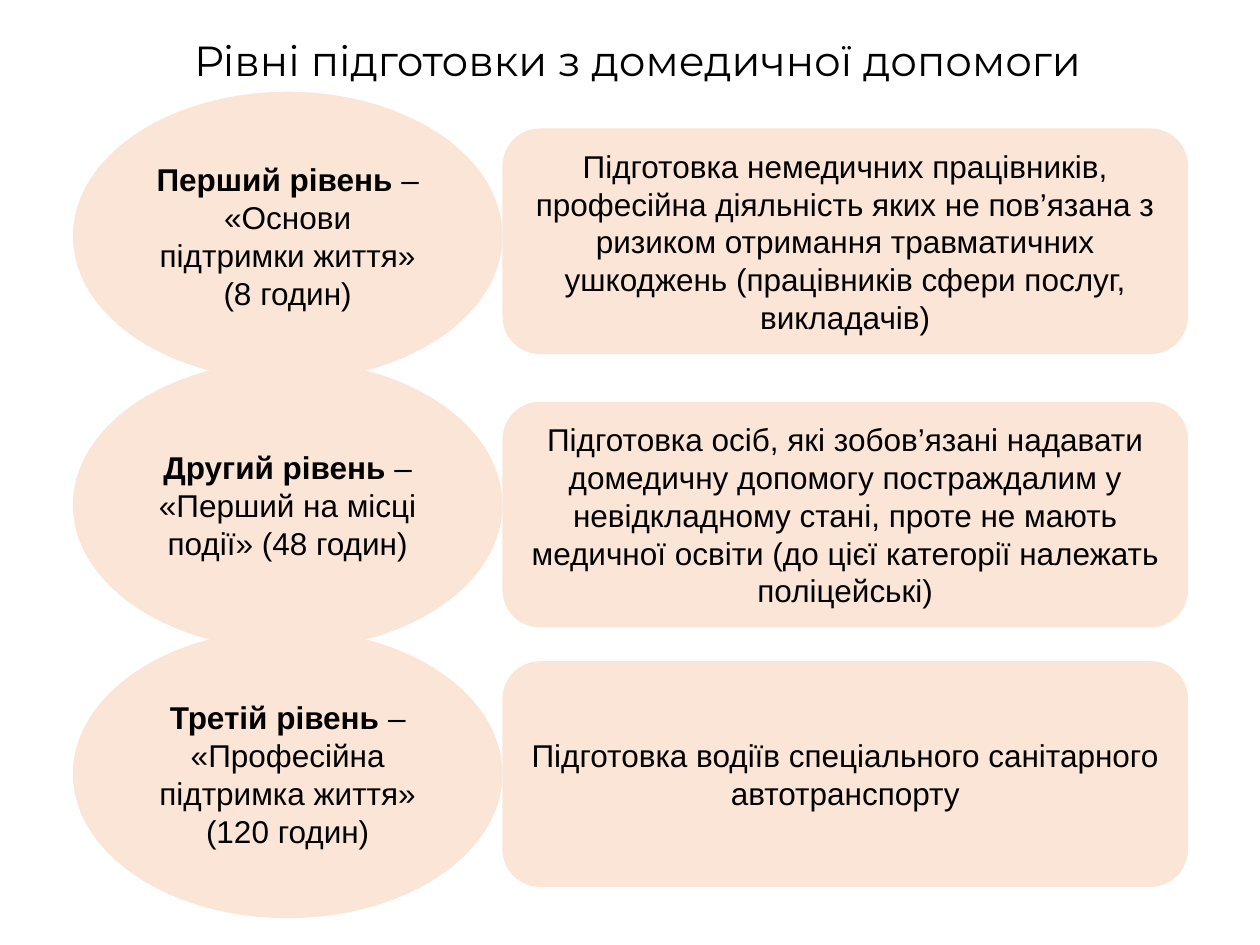
import pptx
import pptx.dml.color
import pptx.enum.shapes
import pptx.enum.text
import pptx.util

Cm = pptx.util.Cm
SHAPES = pptx.enum.shapes.MSO_SHAPE
ALIGN = pptx.enum.text.PP_ALIGN
ANCHOR = pptx.enum.text.MSO_ANCHOR

PEACH = "FBE5D6"
BLACK = "000000"

LEVELS = [
    (1.85, 0.74, "Перший рівень", " – «Основи підтримки життя» (8 годин)",
     "Підготовка немедичних працівників, професійна діяльність яких не пов’язана "
     "з ризиком отримання травматичних ушкоджень (працівників сфери послуг, викладачів)"),
    (7.27, 0.83, "Другий рівень ", "– «Перший на місці події» (48 годин)",
     "Підготовка осіб, які зобов’язані надавати домедичну допомогу постраждалим "
     "у невідкладному стані, проте не мають медичної освіти "
     "(до цієї категорії належать поліцейські)"),
    (12.69, 0.64, "Третій рівень", " – «Професійна підтримка життя» (120 годин)",
     "Підготовка водіїв спеціального санітарного автотранспорту"),
]


def color(value):
    return pptx.dml.color.RGBColor.from_string(value)


def write(paragraph, text, font="Arial", size=18, bold=False, ink=BLACK, align=ALIGN.CENTER):
    paragraph.alignment = align
    run = paragraph.add_run()
    run.text = text
    run.font.name = font
    run.font.size = pptx.util.Pt(size)
    run.font.bold = bold
    run.font.color.rgb = color(ink)


def add_panel(slide, outline, left, top, width, height):
    panel = slide.shapes.add_shape(outline, Cm(left), Cm(top), Cm(width), Cm(height))
    panel.shadow.inherit = False
    panel.fill.solid()
    panel.fill.fore_color.rgb = color(PEACH)
    panel.line.fill.background()
    panel.text_frame.word_wrap = True
    panel.text_frame.vertical_anchor = ANCHOR.MIDDLE
    return panel.text_frame.paragraphs[0]


def place_heading(slide, left, top, width, height):
    heading = slide.shapes.title
    heading.left, heading.top = Cm(left), Cm(top)
    heading.width, heading.height = Cm(width), Cm(height)
    frame = heading.text_frame
    frame.auto_size = pptx.enum.text.MSO_AUTO_SIZE.NONE
    frame.vertical_anchor = ANCHOR.TOP
    write(frame.paragraphs[0], "Рівні підготовки з домедичної допомоги",
          font="Montserrat", size=24, align=ALIGN.LEFT)


def place_level(slide, left, top, width, height, offset, level, course, audience):
    oval_width = 8.66
    label = add_panel(slide, SHAPES.OVAL, left, top, oval_width, height)
    write(label, level, bold=True)
    write(label, course)
    description = add_panel(slide, SHAPES.ROUNDED_RECTANGLE, left + oval_width,
                            top + offset, width - oval_width, 4.55)
    write(description, audience)


def main():
    deck = pptx.Presentation()
    deck.slide_width, deck.slide_height = Cm(25.4), Cm(19.05)
    slide = deck.slides.add_slide(deck.slide_layouts[5])
    place_heading(slide, 3.66, 0.56, 19.91, 1.27)
    for top, offset, level, course, audience in LEVELS:
        place_level(slide, 1.47, top, 22.48, 5.82, offset, level, course, audience)
    deck.save("out.pptx")


if __name__ == "__main__":
    main()
